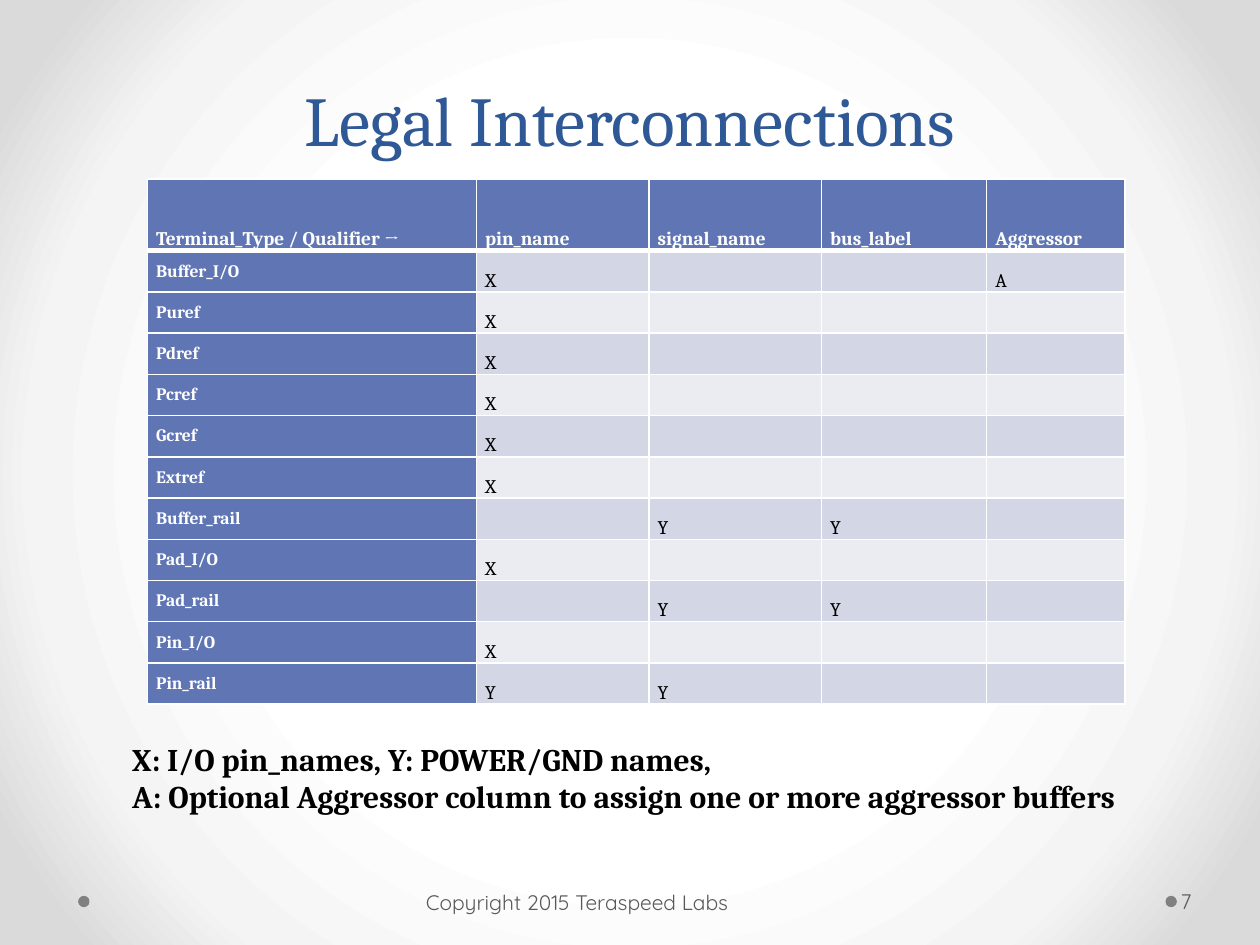
"""Build the Legal Interconnections table slide."""
from dataclasses import dataclass

from pptx import Presentation
from pptx.dml.color import RGBColor
from pptx.enum.shapes import MSO_SHAPE as Preset
from pptx.enum.text import MSO_ANCHOR as Anchor, PP_ALIGN as Align
from pptx.oxml import parse_xml
from pptx.oxml.ns import nsdecls
from pptx.util import Inches, Pt

HEADERS = ["Terminal_Type / Qualifier →", "pin_name", "signal_name", "bus_label", "Aggressor"]
TERMINALS = [
    ("Buffer_I/O", "X", "", "", "A"),
    ("Puref", "X", "", "", ""),
    ("Pdref", "X", "", "", ""),
    ("Pcref", "X", "", "", ""),
    ("Gcref", "X", "", "", ""),
    ("Extref", "X", "", "", ""),
    ("Buffer_rail", "", "Y", "Y", ""),
    ("Pad_I/O", "X", "", "", ""),
    ("Pad_rail", "", "Y", "Y", ""),
    ("Pin_I/O", "X", "", "", ""),
    ("Pin_rail", "Y", "Y", "", ""),
]
LEGEND = [
    "X: I/O pin_names, Y: POWER/GND names,",
    "A: Optional Aggressor column to assign one or more aggressor buffers",
]
COLUMN_WIDTHS = [2.61, 1.37, 1.37, 1.31, 1.1]
TABLE_BOX = (1.17, 1.42, 7.75, 4.17)
HEADER_HEIGHT = 0.57
DOT_LEFTS = [9.25, 0.62]
BACKGROUND_STOPS = [(50, "FFFFFF"), (76, "F4F4F4"), (92, "DADADA")]


@dataclass(frozen=True)
class Theme:
    serif: str = "Cambria"
    sans: str = "Quicksand"
    title: str = "2F5897"
    header: str = "6076B4"
    bands: tuple = ("D2D6E5", "EAECF2")
    white: str = "FFFFFF"
    ink: str = "000000"
    footer: str = "595959"
    dot: str = "808080"
    title_size: int = 40
    legend_size: int = 18
    footer_size: int = 12
    cell_size: int = 11
    label_size: int = 10


THEME = Theme()


def add_run(paragraph, text, size, color, face=THEME.serif, bold=False):
    run = paragraph.add_run()
    run.text = text
    run.font.name = face
    run.font.size = Pt(size)
    run.font.bold = bold
    run.font.color.rgb = RGBColor.from_string(color)


def paint_background(slide):
    stops = "".join(
        f'<a:gs pos="{position * 1000}"><a:srgbClr val="{color}"/></a:gs>'
        for position, color in BACKGROUND_STOPS
    )
    background = parse_xml(
        f'<p:bg {nsdecls("p", "a")}><p:bgPr><a:gradFill rotWithShape="1">'
        f'<a:gsLst>{stops}</a:gsLst><a:path path="circle">'
        '<a:fillToRect l="50000" t="50000" r="50000" b="50000"/></a:path>'
        "</a:gradFill><a:effectLst/></p:bgPr></p:bg>"
    )
    slide.element.cSld.insert(0, background)


def add_dots(slide):
    for left in DOT_LEFTS:
        dot = slide.shapes.add_shape(
            Preset.OVAL, Inches(left), Inches(7.11), Inches(0.09), Inches(0.09)
        )
        dot.shadow.inherit = False
        dot.fill.solid()
        dot.fill.fore_color.rgb = RGBColor.from_string(THEME.dot)
        dot.line.fill.background()


def add_title(slide):
    title = slide.shapes.title
    title.left, title.top, title.width, title.height = map(Inches, (0.5, 0, 9, 1.75))
    title.text_frame.vertical_anchor = Anchor.MIDDLE
    paragraph = title.text_frame.paragraphs[0]
    paragraph.alignment = Align.CENTER
    paragraph.line_spacing = Pt(58)
    add_run(paragraph, "Legal Interconnections", THEME.title_size, THEME.title)


def add_text_box(slide, box):
    frame = slide.shapes.add_textbox(*map(Inches, box)).text_frame
    frame.word_wrap = True
    return frame


def add_footer(slide, text, box, left_inset, right_inset):
    frame = add_text_box(slide, box)
    frame.vertical_anchor = Anchor.MIDDLE
    frame.margin_left, frame.margin_right = Inches(left_inset), Inches(right_inset)
    add_run(frame.paragraphs[0], text, THEME.footer_size, THEME.footer, THEME.sans)


def style_cell(cell, fill, anchor, bottom_width):
    properties = cell._tc.get_or_add_tcPr()
    for side, width in zip("LRTB", (1, 1, 1, bottom_width)):
        properties.append(parse_xml(
            f'<a:ln{side} {nsdecls("a")} w="{Pt(width)}"><a:solidFill>'
            f'<a:srgbClr val="{THEME.white}"/></a:solidFill></a:ln{side}>'
        ))
    cell.fill.solid()
    cell.fill.fore_color.rgb = RGBColor.from_string(fill)
    cell.vertical_anchor = anchor
    cell.margin_left = cell.margin_right = Inches(0.07)
    cell.margin_top = cell.margin_bottom = 0


def add_terminal_table(slide):
    rows = [HEADERS, *TERMINALS]
    table = slide.shapes.add_table(len(rows), len(HEADERS), *map(Inches, TABLE_BOX)).table
    table.horz_banding = False
    for column, width in zip(table.columns, COLUMN_WIDTHS):
        column.width = Inches(width)
    body_height = (TABLE_BOX[3] - HEADER_HEIGHT) / len(TERMINALS)
    for row_index, values in enumerate(rows):
        is_header = row_index == 0
        table.rows[row_index].height = Inches(HEADER_HEIGHT if is_header else body_height)
        for column_index, value in enumerate(values):
            is_label = column_index == 0 and not is_header
            strong = is_header or is_label
            cell = table.cell(row_index, column_index)
            style_cell(
                cell,
                THEME.header if strong else THEME.bands[(row_index - 1) % 2],
                Anchor.MIDDLE if is_label else Anchor.BOTTOM,
                3 if is_header else 1,
            )
            if value:
                add_run(
                    cell.text_frame.paragraphs[0],
                    value,
                    THEME.label_size if is_label else THEME.cell_size,
                    THEME.white if strong else THEME.ink,
                    bold=strong,
                )


def add_legend(slide):
    frame = add_text_box(slide, (0.95, 5.82, 8.58, 0.71))
    for index, line in enumerate(LEGEND):
        paragraph = frame.add_paragraph() if index else frame.paragraphs[0]
        add_run(paragraph, line, THEME.legend_size, THEME.ink, bold=True)


def main():
    presentation = Presentation()
    presentation.slide_width, presentation.slide_height = Inches(10), Inches(7.5)
    slide = presentation.slides.add_slide(presentation.slide_layouts.get_by_name("Title Only"))
    paint_background(slide)
    add_dots(slide)
    add_title(slide)
    add_footer(slide, "7", (9.34, 6.95, 0.61, 0.4), 0.03, 0.05)
    add_footer(slide, "Copyright 2015 Teraspeed Labs", (3.33, 6.96, 3.11, 0.4), 0.05, 0.1)
    add_terminal_table(slide)
    add_legend(slide)
    presentation.save("out.pptx")


if __name__ == "__main__":
    main()
